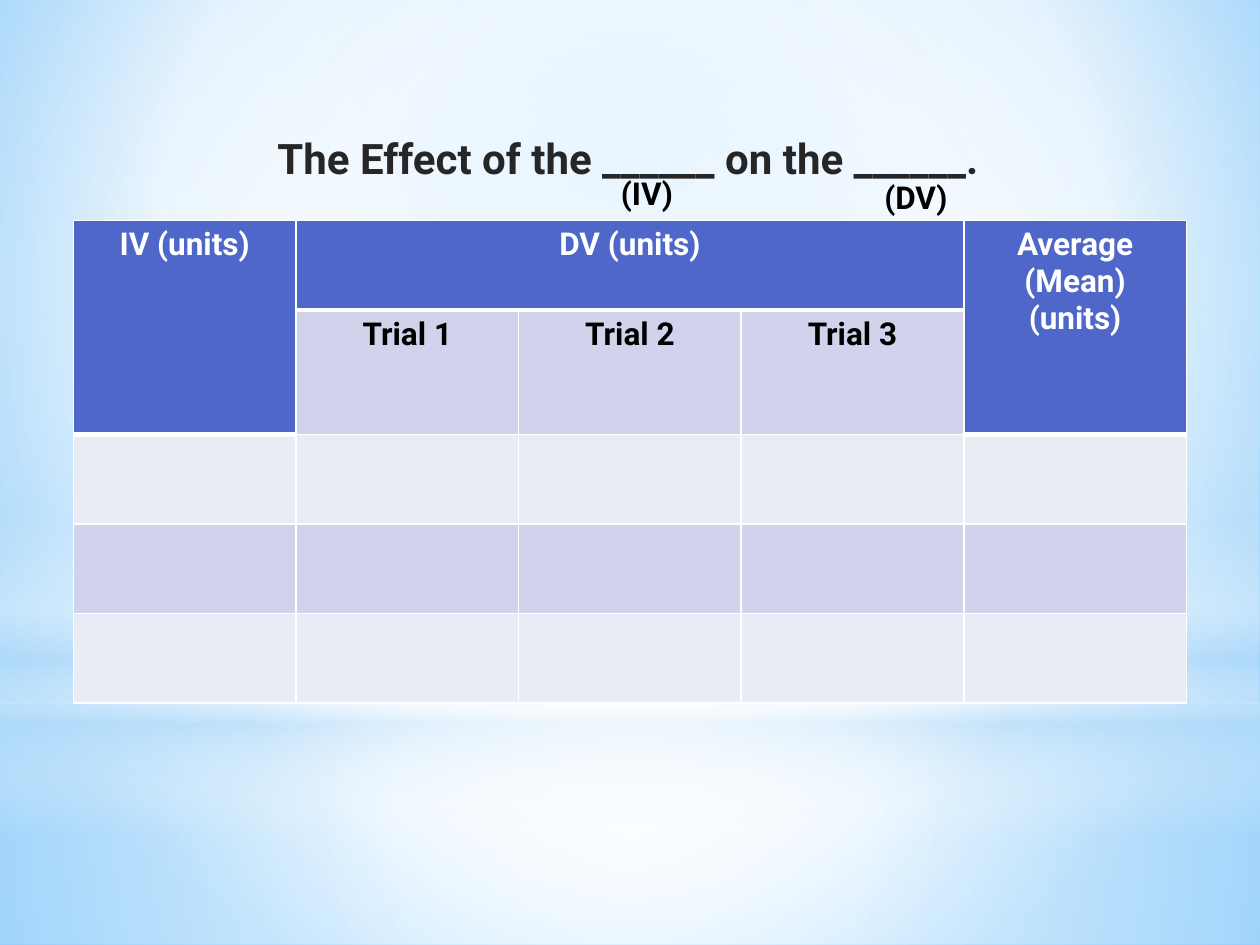
from lxml import etree
from pptx import Presentation
from pptx.dml.color import RGBColor
from pptx.enum.shapes import MSO_SHAPE
from pptx.enum.text import PP_ALIGN
from pptx.oxml.ns import qn
from pptx.util import Inches, Pt

RECT, OVAL = MSO_SHAPE.RECTANGLE, MSO_SHAPE.OVAL
CENTER, LEFT = PP_ALIGN.CENTER, PP_ALIGN.LEFT
THEME = dict(font="Roboto", title=24, body=18, ink="000000", title_ink="262626",
             white="FFFFFF", header="4E67C8", band="D0D3EB", light="E9EBF5",
             haze="B4DCFA", sky="9ED5FF", deep="5BB9FF")
WHITE, HAZE = THEME["white"], THEME["haze"]

prs = Presentation()
prs.slide_width, prs.slide_height = Inches(10), Inches(7.5)
s = prs.slides.add_slide(prs.slide_layouts[6])


def share(x, y, w, h):
    """Turn percentages of the slide's width and height into lengths."""
    across, down = prs.slide_width / 100, prs.slide_height / 100
    return [round(v) for v in (x * across, y * down, w * across, h * down)]


def gradient(parent, stops, center=None):
    """Swap the solid fill for (position, colour, opacity) stops.

    center holds the left, top, right and bottom insets of a circular
    gradient; without it the gradient runs from top to bottom.
    """
    solid = parent.find(qn("a:solidFill"))
    grad = etree.Element(qn("a:gradFill"), rotWithShape="1")
    stop_list = etree.SubElement(grad, qn("a:gsLst"))
    for position, color, opacity in stops:
        stop = etree.SubElement(stop_list, qn("a:gs"), pos=str(position * 1000))
        rgb = etree.SubElement(stop, qn("a:srgbClr"), val=color)
        etree.SubElement(rgb, qn("a:alpha"), val=str(opacity * 1000))
    if center:
        path = etree.SubElement(grad, qn("a:path"), path="circle")
        insets = {side: str(v * 1000) for side, v in zip("ltrb", center)}
        etree.SubElement(path, qn("a:fillToRect"), **insets)
    else:
        etree.SubElement(grad, qn("a:lin"), ang="5400000", scaled="0")
    parent.replace(solid, grad)


# Sky background and its light layers
s.background.fill.solid()
gradient(s.element.find(".//" + qn("p:bgPr")),
         [(0, THEME["sky"], 100), (60, WHITE, 100), (100, THEME["deep"], 100)],
         (20, 10, 20, 60))
MIDDLE = (50, 50, 50, 50)
layers = [
    (RECT, 74.4, 25.6, MIDDLE, [(0, WHITE, 91), (37, WHITE, 76), (100, HAZE, 79)]),
    (RECT, 0, 74.4, MIDDLE, [(0, WHITE, 89), (48, WHITE, 62), (100, HAZE, 79)]),
    (RECT, 54.93, 33.33, None, [(0, WHITE, 0), (29, WHITE, 30), (45, HAZE, 40),
                                (55, WHITE, 26), (65, HAZE, 60), (100, WHITE, 0)]),
    (OVAL, 23.33, 74.4, MIDDLE, [(0, WHITE, 100), (56, WHITE, 0)]),
]
for kind, top, height, center, stops in layers:
    sp = s.shapes.add_shape(kind, *share(0, top, 100, height))
    sp.shadow.inherit = False
    sp.line.fill.background()
    sp.fill.solid()
    gradient(sp.element.spPr, stops, center)

# Results table
COLUMNS, ROW_SHARES = 5, [9.47, 13.2, 9.47, 9.47, 9.47]
frame = s.shapes.add_table(len(ROW_SHARES), COLUMNS,
                           *share(5.83, 23.33, 88.33, sum(ROW_SHARES)))
table = frame.table
for row, height in zip(table.rows, ROW_SHARES):
    row.height = share(0, 0, 0, height)[3]
for column in table.columns:
    column.width = share(0, 0, 88.33 / COLUMNS, 0)[2]

labels = {(0, 0): "IV (units)", (0, 1): "DV (units)", (0, 4): "Average (Mean) (units)",
          (1, 1): "Trial 1", (1, 2): "Trial 2", (1, 3): "Trial 3"}
for r in range(len(ROW_SHARES)):
    for c in range(COLUMNS):
        cell = table.cell(r, c)
        header = r == 0 or (r == 1 and c in (0, COLUMNS - 1))
        tc_pr = cell._tc.get_or_add_tcPr()
        for side in "LRTB":
            width = 3 if header and side == "B" else 1
            line = etree.SubElement(tc_pr, qn("a:ln" + side), w=str(Pt(width)))
            fill = etree.SubElement(line, qn("a:solidFill"))
            etree.SubElement(fill, qn("a:srgbClr"), val=WHITE)
        cell.fill.solid()
        color = "header" if header else "band" if r % 2 else "light"
        cell.fill.fore_color.rgb = RGBColor.from_string(THEME[color])
        p = cell.text_frame.paragraphs[0]
        p.alignment = CENTER
        p.font.size = Pt(THEME["body"])
        if (r, c) in labels:
            run = p.add_run()
            run.text = labels[r, c]
            for name, value in dict(name=THEME["font"], size=Pt(THEME["body"]),
                                    bold=True).items():
                setattr(run.font, name, value)
            run.font.color.rgb = RGBColor.from_string(WHITE if header else THEME["ink"])
for first, last in [((0, 0), (1, 0)), ((0, 1), (0, 3)), ((0, 4), (1, 4))]:
    table.cell(*first).merge(table.cell(*last))

# Title and the labels under its blanks
texts = [
    ("The Effect of the ______ on the ______.", (7.5, 13.33, 84.7, 8.27),
     "title", "title_ink", CENTER, 2),
    ("(IV)", (48.3, 17.73, 6.7, 5.33), "body", "ink", LEFT, 0),
    ("(DV)", (69.2, 18.13, 8.3, 5.33), "body", "ink", LEFT, 0),
]
for text, box, size, color, align, before in texts:
    tf = s.shapes.add_textbox(*share(*box)).text_frame
    tf.word_wrap = True
    p = tf.paragraphs[0]
    p.alignment, p.space_before = align, Pt(before)
    run = p.add_run()
    run.text = text
    for name, value in dict(name=THEME["font"], size=Pt(THEME[size]), bold=True).items():
        setattr(run.font, name, value)
    run.font.color.rgb = RGBColor.from_string(THEME[color])

prs.save("out.pptx")
